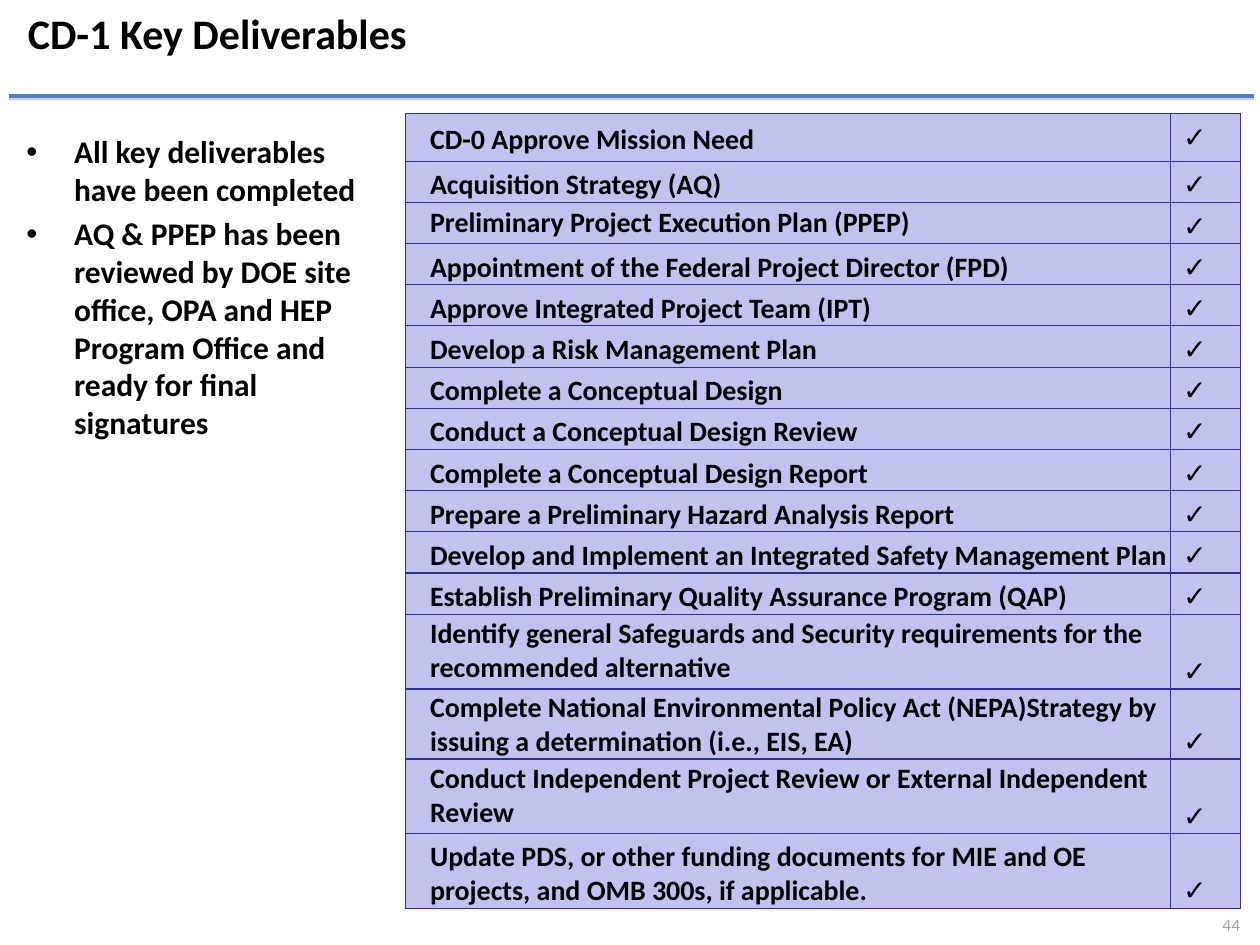
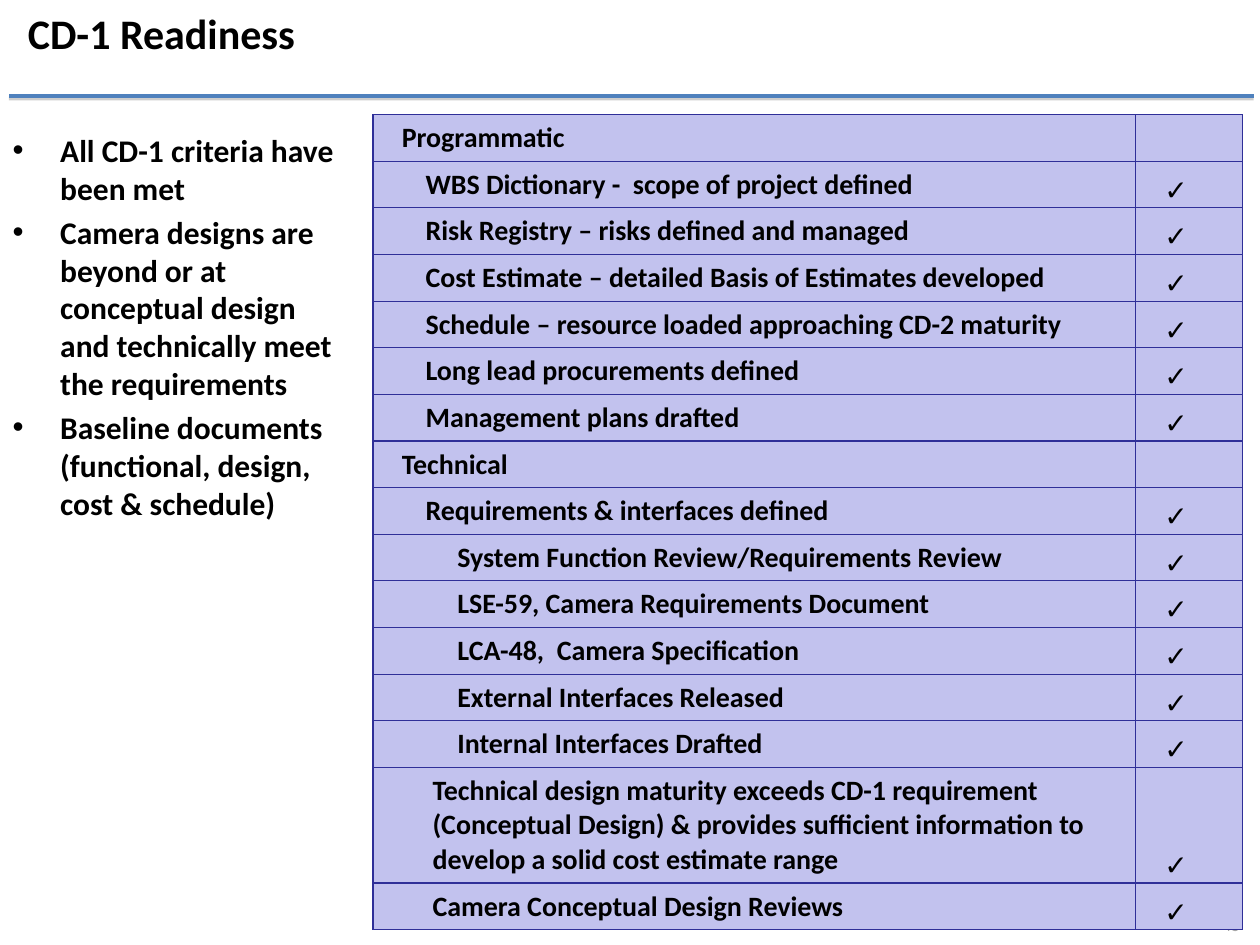
from lxml import etree
from pptx import Presentation
from pptx.dml.color import RGBColor
from pptx.enum.shapes import MSO_CONNECTOR
from pptx.enum.text import MSO_ANCHOR, MSO_AUTO_SIZE, PP_ALIGN
from pptx.oxml.ns import qn
from pptx.util import Cm, Pt

STRAIGHT = MSO_CONNECTOR.STRAIGHT
TOP, BOTTOM = MSO_ANCHOR.TOP, MSO_ANCHOR.BOTTOM
LEFT, RIGHT = PP_ALIGN.LEFT, PP_ALIGN.RIGHT
NO_AUTOFIT = MSO_AUTO_SIZE.NONE

FONT = "Calibri"
COLORS = {
    "text": "000000",
    "rule": "4F81BD",
    "rule_shadow": "808080",
    "page_number": "A6A6A6",
    "cell": "C2C2EE",
    "border": "2F2F98",
}
CHECK = "✓"

# Cell margins in cm: left, top, right, bottom
SNUG = (0.03, 0.03, 0.03, 0)
RAISED = (0.03, 0.05, 0.03, 0.08)
ROOMY = (0.58, 0.13, 0.58, 0.13)

# Text indents of the readiness levels in cm
HEADING, ITEM, DETAIL, SUMMARY = 0, 0.48, 1.12, 0.62

# Table rows: text, indent, margins, height in cm
DELIVERABLES = [
    (text, 0.46, margins, height)
    for text, margins, height in [
        ("CD-0 Approve Mission Need", RAISED, 0.96),
        ("Acquisition Strategy (AQ)", SNUG, 0.83),
        ("Preliminary Project Execution Plan (PPEP)", RAISED, 0.83),
        ("Appointment of the Federal Project Director (FPD)", SNUG, 0.83),
        ("Approve Integrated Project Team (IPT)", SNUG, 0.83),
        ("Develop a Risk Management Plan", SNUG, 0.83),
        ("Complete a Conceptual Design", SNUG, 0.83),
        ("Conduct a Conceptual Design Review", SNUG, 0.83),
        ("Complete a Conceptual Design Report", SNUG, 0.83),
        ("Prepare a Preliminary Hazard Analysis Report", SNUG, 0.83),
        ("Develop and Implement an Integrated Safety Management Plan", SNUG, 0.83),
        ("Establish Preliminary Quality Assurance Program (QAP)", SNUG, 0.83),
        ("Identify general Safeguards and Security requirements for the "
         "recommended alternative", RAISED, 1.51),
        ("Complete National Environmental Policy Act (NEPA)Strategy by "
         "issuing a determination (i.e., EIS, EA)", SNUG, 1.41),
        ("Conduct Independent Project Review or External Independent Review",
         RAISED, 1.51),
        ("Update PDS, or other funding documents for MIE and OE projects, "
         "and OMB 300s, if applicable.", SNUG, 1.5),
    ]
]
READINESS = [
    (text, indent, ROOMY, 2.33 if len(text) > 100 else 0.94)
    for text, indent in [
        ("Programmatic", HEADING),
        ("WBS Dictionary -  scope of project defined", ITEM),
        ("Risk Registry – risks defined and managed", ITEM),
        ("Cost Estimate – detailed Basis of Estimates developed", ITEM),
        ("Schedule – resource loaded approaching CD-2 maturity", ITEM),
        ("Long lead procurements defined", ITEM),
        ("Management plans drafted", ITEM),
        ("Technical", HEADING),
        ("Requirements & interfaces defined", ITEM),
        ("System Function Review/Requirements Review", DETAIL),
        ("LSE-59, Camera Requirements Document", DETAIL),
        ("LCA-48,  Camera Specification", DETAIL),
        ("External Interfaces Released", DETAIL),
        ("Internal Interfaces Drafted", DETAIL),
        ("Technical design maturity exceeds CD-1 requirement (Conceptual "
         "Design) & provides sufficient information to develop a solid cost "
         "estimate range", SUMMARY),
        ("Camera Conceptual Design Reviews", SUMMARY),
    ]
]

# Boxes are left, top, width, height in cm
SLIDES = [
    {
        "title": "CD-1 Key Deliverables",
        "page": 44,
        "bullets": [
            "All key deliverables have been completed",
            "AQ & PPEP has been reviewed by DOE site office, OPA and HEP "
            "Program Office and ready for final signatures",
        ],
        "bullet_box": (0.28, 2.54, 7.62, 15.7),
        "rows": DELIVERABLES,
        "table_corner": (8.18, 2.29),
        "columns": (15.42, 1.4),
        "check_margin": 0.25,
        "first_check_padding": 0.13,
    },
    {
        "title": "CD-1 Readiness",
        "page": 45,
        "bullets": [
            "All CD-1 criteria have been met",
            "Camera designs are beyond or at conceptual design and "
            "technically meet the requirements",
            "Baseline documents (functional, design, cost & schedule)",
        ],
        "bullet_box": (0, 2.51, 7.01, 14.99),
        "rows": READINESS,
        "table_corner": (7.52, 2.31),
        "columns": (15.37, 2.16),
        "check_margin": 0.58,
        "first_check_padding": 0,
    },
]


def place(shape, box):
    shape.left, shape.top, shape.width, shape.height = map(Cm, box)


def set_margins(target, margins):
    (target.margin_left, target.margin_top,
     target.margin_right, target.margin_bottom) = map(Cm, margins)


def format_runs(paragraph, size, color="text", bold=True):
    for run in paragraph.runs:
        run.font.name = FONT
        run.font.size = Pt(size)
        run.font.bold = bold
        run.font.color.rgb = RGBColor.from_string(COLORS[color])


def set_indent(paragraph, left, first_line=0):
    properties = paragraph._p.get_or_add_pPr()
    properties.set("marL", str(Cm(left)))
    properties.set("indent", str(Cm(first_line)))
    return properties


def add_color(parent, color):
    fill = etree.SubElement(parent, qn("a:solidFill"))
    return etree.SubElement(fill, qn("a:srgbClr"), val=COLORS[color])


def add_title(slide, text):
    title = slide.shapes.title
    place(title, (0.43, 0.1, 19.53, 2.34))
    frame = title.text_frame
    frame.text = text
    frame.vertical_anchor = TOP
    frame.auto_size = NO_AUTOFIT
    set_margins(frame, (0.13, 0.05, 0.13, 0.13))
    frame.paragraphs[0].alignment = LEFT
    format_runs(frame.paragraphs[0], 24)


def add_rule(slide):
    rule = slide.shapes.add_connector(
        STRAIGHT, Cm(25.27), Cm(1.93), Cm(0.18), Cm(1.93))
    rule.line.color.rgb = RGBColor.from_string(COLORS["rule"])
    rule.line.width = Pt(2)
    effects = etree.SubElement(rule._element.spPr, qn("a:effectLst"))
    shadow = etree.SubElement(effects, qn("a:outerShdw"), blurRad="0",
                              dist=str(Pt(1.6)), dir="5400000", rotWithShape="0")
    color = etree.SubElement(shadow, qn("a:srgbClr"), val=COLORS["rule_shadow"])
    etree.SubElement(color, qn("a:alpha"), val="38000")


def add_page_number(slide, number):
    box = slide.shapes.add_textbox(Cm(0.36), Cm(18.42), Cm(24.64), Cm(0.43))
    frame = box.text_frame
    frame.word_wrap = True
    set_margins(frame, (0, 0, 0, 0))
    frame.text = str(number)
    frame.paragraphs[0].alignment = RIGHT
    format_runs(frame.paragraphs[0], 10, "page_number", bold=False)


def add_bullets(slide, bullets, box):
    body = slide.placeholders[1]
    place(body, box)
    frame = body.text_frame
    frame.text = "\n".join(bullets)
    frame.auto_size = NO_AUTOFIT
    for index, paragraph in enumerate(frame.paragraphs):
        properties = set_indent(paragraph, 0.96, -0.96)
        etree.SubElement(properties, qn("a:buFont"), typeface="Arial")
        etree.SubElement(properties, qn("a:buChar"), char="•")
        paragraph.space_before = Pt(3.6 if index else 0)
        format_runs(paragraph, 18)


def fill_cell(cell, text, margins, indent=0):
    cell.text = text
    cell.vertical_anchor = BOTTOM
    set_margins(cell, margins)
    paragraph = cell.text_frame.paragraphs[0]
    set_indent(paragraph, indent)
    format_runs(paragraph, 16)
    properties = cell._tc.get_or_add_tcPr()
    for side in ("lnL", "lnR", "lnT", "lnB"):
        border = etree.SubElement(properties, qn(f"a:{side}"), w=str(Pt(0.75)))
        add_color(border, "border")
    cell.fill.solid()
    cell.fill.fore_color.rgb = RGBColor.from_string(COLORS["cell"])


def add_checklist(slide, content):
    rows, columns = content["rows"], content["columns"]
    left, top = content["table_corner"]
    height = sum(row[-1] for row in rows)
    table = slide.shapes.add_table(
        len(rows), len(columns), Cm(left), Cm(top),
        Cm(sum(columns)), Cm(height)).table
    table.first_row = table.horz_banding = False
    for column, width in zip(table.columns, columns):
        column.width = Cm(width)
    side = content["check_margin"]
    for index, (text, indent, margins, row_height) in enumerate(rows):
        table.rows[index].height = Cm(row_height)
        fill_cell(table.cell(index, 0), text, margins, indent)
        padding = 0 if index else content["first_check_padding"]
        check = "" if indent == HEADING else CHECK
        fill_cell(table.cell(index, 1), check, (side, padding, side, padding))


def main():
    presentation = Presentation()
    presentation.slide_width, presentation.slide_height = Cm(25.4), Cm(19.05)
    layout = presentation.slide_layouts[1]
    for content in SLIDES:
        slide = presentation.slides.add_slide(layout)
        add_rule(slide)
        add_page_number(slide, content["page"])
        add_title(slide, content["title"])
        add_bullets(slide, content["bullets"], content["bullet_box"])
        add_checklist(slide, content)
    presentation.save("out.pptx")


if __name__ == "__main__":
    main()
